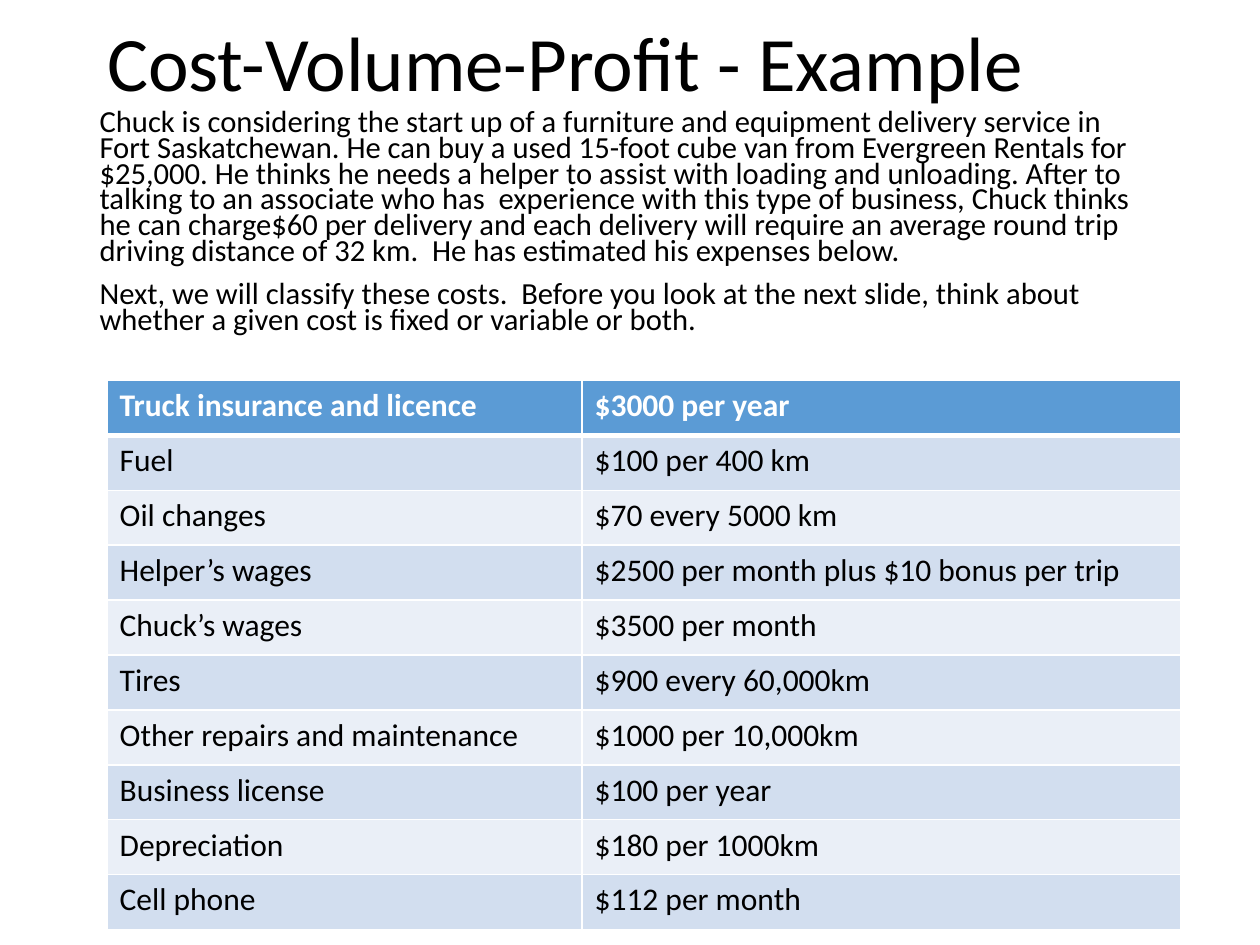
"""Build the cost-volume-profit example slide."""
from lxml import etree
from pptx import Presentation
from pptx.dml.color import RGBColor
from pptx.enum import text as t
from pptx.oxml import ns
from pptx.util import Pt

TITLE = "Cost-Volume-Profit - Example"
STORY = [
    "Chuck is considering the start up of a furniture and equipment delivery service in Fort "
    "Saskatchewan. He can buy a used 15-foot cube van from Evergreen Rentals for $25,000. "
    "He thinks he needs a helper to assist with loading and unloading. After to talking to an "
    "associate who has  experience with this type of business, Chuck thinks he can charge$60 "
    "per delivery and each delivery will require an average round trip driving distance of "
    "32 km.  He has estimated his expenses below.",
    "Next, we will classify these costs.  Before you look at the next slide, think about "
    "whether a given cost is fixed or variable or both.",
]
COSTS = [
    ("Truck insurance and licence", "$3000 per year"),
    ("Fuel", "$100 per 400 km"),
    ("Oil changes", "$70 every 5000 km"),
    ("Helper’s wages", "$2500 per month plus $10 bonus per trip"),
    ("Chuck’s wages", "$3500 per month"),
    ("Tires", "$900 every 60,000km"),
    ("Other repairs and maintenance", "$1000 per 10,000km"),
    ("Business license", "$100 per year"),
    ("Depreciation", "$180 per 1000km"),
    ("Cell phone", "$112 per month"),
]
WIDTHS = (271.4, 342)
ROW = 31.4
HEAD, BANDS = "5B9BD5", ("EAEFF7", "D2DEEF")
BLACK, WHITE = "000000", "FFFFFF"


def paint(fmt, color):
    fmt.solid()
    fmt.fore_color.rgb = RGBColor.from_string(color)


def style(para, size, color=BLACK, bold=False):
    for run in para.runs:
        font = run.font
        font.name, font.size, font.bold = "Calibri", Pt(size), bold
        paint(font.fill, color)


def place(shape, left, top, width, height):
    shape.left, shape.top = Pt(left), Pt(top)
    shape.width, shape.height = Pt(width), Pt(height)
    shape.text_frame.auto_size = t.MSO_AUTO_SIZE.NONE
    shape.text_frame.word_wrap = True


def border(cell, side, width):
    props = cell._tc.get_or_add_tcPr()
    line = etree.SubElement(props, ns.qn("a:ln" + side), w=str(Pt(width)))
    fill = etree.SubElement(line, ns.qn("a:solidFill"))
    etree.SubElement(fill, ns.qn("a:srgbClr"), val=WHITE)


def add_title(slide):
    title = slide.shapes.title
    place(title, 54, 8.64, 620.6, 59)
    frame = title.text_frame
    frame.text = TITLE
    frame.vertical_anchor = t.MSO_ANCHOR.MIDDLE
    para = frame.paragraphs[0]
    para.alignment, para.line_spacing = t.PP_ALIGN.LEFT, 0.9
    style(para, 44)


def add_story(slide):
    body = slide.placeholders[1]
    place(body, 49.7, 60.5, 620.6, 164.2)
    body.text_frame.text = "\n".join(STORY)
    for para in body.text_frame.paragraphs:
        para.line_spacing, para.space_before = 0.7, Pt(10)
        props = para._p.get_or_add_pPr()
        props.set("marL", "0")
        props.set("indent", "0")
        etree.SubElement(props, ns.qn("a:buNone"))
        style(para, 17.5)


def add_costs(slide):
    table = slide.shapes.add_table(
        len(COSTS), len(WIDTHS), Pt(61.2), Pt(217.4),
        Pt(sum(WIDTHS)), Pt(ROW * len(COSTS))).table
    for col, width in zip(table.columns, WIDTHS):
        col.width = Pt(width)
    for i, items in enumerate(COSTS):
        head = i == 0
        table.rows[i].height = Pt(ROW)
        for j, item in enumerate(items):
            cell = table.cell(i, j)
            cell.text_frame.text = item
            style(cell.text_frame.paragraphs[0], 18, WHITE if head else BLACK, head)
            for side in "LRTB" if head else "LRB":
                border(cell, side, 3 if head and side == "B" else 1)
            paint(cell.fill, HEAD if head else BANDS[i % 2])


def main():
    deck = Presentation()
    deck.slide_width, deck.slide_height = Pt(720), Pt(540)
    slide = deck.slides.add_slide(deck.slide_layouts[1])
    add_title(slide)
    add_story(slide)
    add_costs(slide)
    deck.save("out.pptx")


if __name__ == "__main__":
    main()
